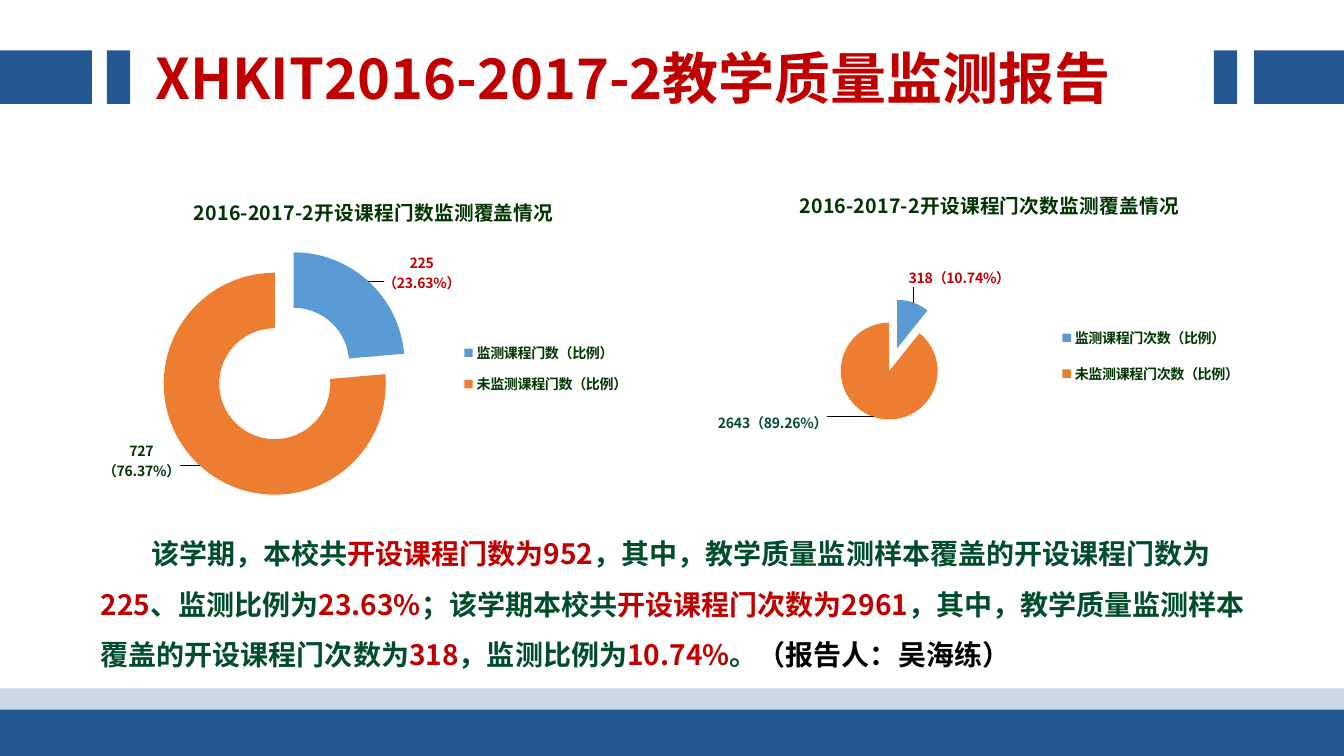
"""Build the teaching quality monitoring slide with two coverage charts."""
import copy
import dataclasses
import typing

import pptx
import pptx.chart.data
import pptx.dml.color
import pptx.enum.chart
import pptx.enum.shapes
import pptx.oxml
import pptx.oxml.ns
import pptx.util

RGBColor = pptx.dml.color.RGBColor
ChartType = pptx.enum.chart.XL_CHART_TYPE

NAVY = RGBColor(0x23, 0x58, 0x93)
PALE = RGBColor(0xC8, 0xD8, 0xE5)
RED = RGBColor(0xC0, 0x00, 0x00)
GREEN = RGBColor(0x00, 0x4D, 0x2A)
DARK_GREEN = RGBColor(0x00, 0x33, 0x00)
BLACK = RGBColor(0x00, 0x00, 0x00)
BLUE = RGBColor(0x5B, 0x9B, 0xD5)
ORANGE = RGBColor(0xED, 0x7D, 0x31)

FONT = "Noto Sans CJK SC"
SLIDE_WIDTH = pptx.util.Inches(13.33)
SLIDE_HEIGHT = pptx.util.Inches(7.5)


@dataclasses.dataclass(frozen=True)
class Box:
    """A rectangle in percent of the area that holds it."""

    left: float
    top: float
    width: float
    height: float

    def on_slide(self) -> tuple[int, int, int, int]:
        """Return the rectangle as lengths on the slide."""
        return (
            int(SLIDE_WIDTH * self.left / 100),
            int(SLIDE_HEIGHT * self.top / 100),
            int(SLIDE_WIDTH * self.width / 100),
            int(SLIDE_HEIGHT * self.height / 100),
        )


@dataclasses.dataclass(frozen=True)
class Bar:
    """A plain coloured bar."""

    box: Box
    color: RGBColor


@dataclasses.dataclass(frozen=True)
class Slice:
    """A chart slice with its label, moved by a percentage of the chart."""

    category: str
    value: int
    color: RGBColor
    label: str
    label_color: RGBColor
    shift: tuple[float, float]


@dataclasses.dataclass(frozen=True)
class CoverageChart:
    """A round chart with the places of its plot and legend."""

    box: Box
    kind: ChartType
    title: str
    plot: Box
    legend: Box
    slices: tuple[Slice, ...]


BARS = (
    Bar(Box(0, 91.07, 100, 7.33), PALE),
    Bar(Box(0, 93.87, 100, 6.13), NAVY),
    *(
        Bar(Box(left, 6.67, width, 7.07), NAVY)
        for left, width in ((0, 6.83), (7.95, 1.73), (93.32, 6.68), (90.32, 1.73))
    ),
)

TITLE = (("XHKIT2016-2017-2教学质量监测报告", RED),)
SUMMARY = (
    ("该学期，本校共", GREEN),
    ("开设课程门数为952", RED),
    ("，其中，教学质量监测样本覆盖的开设课程门数为", GREEN),
    ("225", RED),
    ("、监测比例为", GREEN),
    ("23.63%", RED),
    ("；该学期本校共", GREEN),
    ("开设课程门次数为2961", RED),
    ("，其中，教学质量监测样本覆盖的开设课程门次数为", GREEN),
    ("318", RED),
    ("，监测比例为", GREEN),
    ("10.74%", RED),
    ("。", GREEN),
    ("（报告人：吴海练）", BLACK),
)

CHARTS = (
    CoverageChart(
        Box(6.75, 23.73, 42.16, 44.67),
        ChartType.DOUGHNUT_EXPLODED,
        "2016-2017-2开设课程门数监测覆盖情况",
        Box(12.1, 20.5, 44.1, 74),
        Box(65.3, 45, 30, 22),
        (
            Slice("监测课程门数（比例）", 225, BLUE, "225（23.63%）", RED, (12.7, -8.6)),
            Slice("未监测课程门数（比例）", 727, ORANGE, "727（76.37%）", DARK_GREEN, (-13.6, 4.6)),
        ),
    ),
    CoverageChart(
        Box(53.19, 22.8, 40.89, 42.93),
        ChartType.PIE_EXPLODED,
        "2016-2017-2开设课程门次数监测覆盖情况",
        Box(21.4, 39.1, 22.1, 37.3),
        Box(62.8, 43, 33, 27),
        (
            Slice("监测课程门次数（比例）", 318, BLUE, "318（10.74%）", RED, (-1.2, -3)),
            Slice("未监测课程门次数（比例）", 2643, ORANGE, "2643（89.26%）", GREEN, (-8, -3)),
        ),
    ),
)


def format_font(font: typing.Any, size: float, color: RGBColor) -> None:
    """Make a font bold with the given size and colour."""
    values = {"name": FONT, "size": pptx.util.Pt(size), "bold": True}
    for name, value in values.items():
        setattr(font, name, value)
    font.color.rgb = color


def set_east_asian_fonts(element: typing.Any) -> None:
    """Use each Latin typeface for East Asian text too."""
    for latin in list(element.iter(pptx.oxml.ns.qn("a:latin"))):
        east_asian = copy.deepcopy(latin)
        east_asian.tag = pptx.oxml.ns.qn("a:ea")
        latin.addnext(east_asian)


def set_layout(parent: typing.Any, index: int, values: dict[str, float], inner: bool = False) -> None:
    """Give a chart part a manual layout from percentages."""
    for layout in parent.findall(pptx.oxml.ns.qn("c:layout")):
        parent.remove(layout)
    entries = [("layoutTarget", "inner")] if inner else []
    if "w" in values:
        entries += [("xMode", "edge"), ("yMode", "edge")]
    entries += [(name, f"{value / 100:.3f}") for name, value in values.items()]
    content = "".join(f'<c:{name} val="{value}"/>' for name, value in entries)
    namespace = pptx.oxml.ns.nsdecls("c")
    parent.insert(index, pptx.oxml.parse_xml(
        f"<c:layout {namespace}><c:manualLayout>{content}</c:manualLayout></c:layout>"))


def add_bar(slide: typing.Any, bar: Bar) -> None:
    """Draw one bar."""
    shape = slide.shapes.add_shape(pptx.enum.shapes.MSO_SHAPE.RECTANGLE, *bar.box.on_slide())
    shape.shadow.inherit = False
    shape.fill.solid()
    shape.fill.fore_color.rgb = bar.color
    shape.line.fill.background()


def add_text(slide: typing.Any, box: Box, runs: tuple, size: float) -> typing.Any:
    """Add a text box of coloured runs and return its shape."""
    shape = slide.shapes.add_textbox(*box.on_slide())
    shape.text_frame.word_wrap = True
    for text, color in runs:
        run = shape.text_frame.paragraphs[0].add_run()
        run.text = text
        format_font(run.font, size, color)
    return shape


def add_coverage_chart(slide: typing.Any, item: CoverageChart) -> None:
    """Draw one chart with its title, legend and labels."""
    data = pptx.chart.data.CategoryChartData()
    data.categories = [part.category for part in item.slices]
    data.add_series("Series 1", [part.value for part in item.slices])
    chart = slide.shapes.add_chart(item.kind, *item.box.on_slide(), data).chart
    chart.font.name, chart.font.size = "Calibri", pptx.util.Pt(10)
    chart.has_title = chart.has_legend = True
    run = chart.chart_title.text_frame.paragraphs[0].add_run()
    run.text = item.title
    format_font(run.font, 14, DARK_GREEN)
    chart.legend.position = pptx.enum.chart.XL_LEGEND_POSITION.RIGHT
    chart.legend.include_in_layout = False
    format_font(chart.legend.font, 10, DARK_GREEN)

    series = chart.plots[0].series[0]
    series.data_labels.show_value = True
    format_font(series.data_labels.font, 10, DARK_GREEN)
    for index, part in enumerate(item.slices):
        point = series.points[index]
        point.format.fill.solid()
        point.format.fill.fore_color.rgb = part.color
        run = point.data_label.text_frame.paragraphs[0].add_run()
        run.text = part.label
        format_font(run.font, 10, part.label_color)
        if item.kind == ChartType.PIE_EXPLODED:
            point.data_label.position = pptx.enum.chart.XL_LABEL_POSITION.OUTSIDE_END

    root = chart.element
    for label, part in zip(root.xpath(".//c:dLbl"), item.slices):
        set_layout(label, 1, dict(zip("xy", part.shift)))
    for tag, index, box in (("c:plotArea", 0, item.plot), ("c:legend", 1, item.legend)):
        set_layout(root.xpath(f".//{tag}")[0], index,
                   dict(zip("xywh", dataclasses.astuple(box))), tag == "c:plotArea")
    for explosion in root.xpath(".//c:explosion"):
        explosion.getparent().remove(explosion)
    root.xpath(".//c:dPt")[0].addprevious(pptx.oxml.parse_xml(
        f'<c:explosion {pptx.oxml.ns.nsdecls("c")} val="25"/>'))
    set_east_asian_fonts(root)


def main() -> None:
    """Build and save the slide."""
    presentation = pptx.Presentation()
    presentation.slide_width, presentation.slide_height = SLIDE_WIDTH, SLIDE_HEIGHT
    slide = presentation.slides.add_slide(presentation.slide_layouts[6])
    for bar in BARS:
        add_bar(slide, bar)
    add_text(slide, Box(10.8, 5.07, 86.5, 10.27), TITLE, 40)
    summary = add_text(slide, Box(6.75, 68.13, 88.37, 21.47), SUMMARY, 20)
    summary.text_frame.paragraphs[0].line_spacing = 1.5
    summary.element.xpath(".//a:pPr")[0].set("indent", str(pptx.util.Inches(0.5)))
    for item in CHARTS:
        add_coverage_chart(slide, item)
    set_east_asian_fonts(slide.element)
    presentation.save("out.pptx")


if __name__ == "__main__":
    main()
